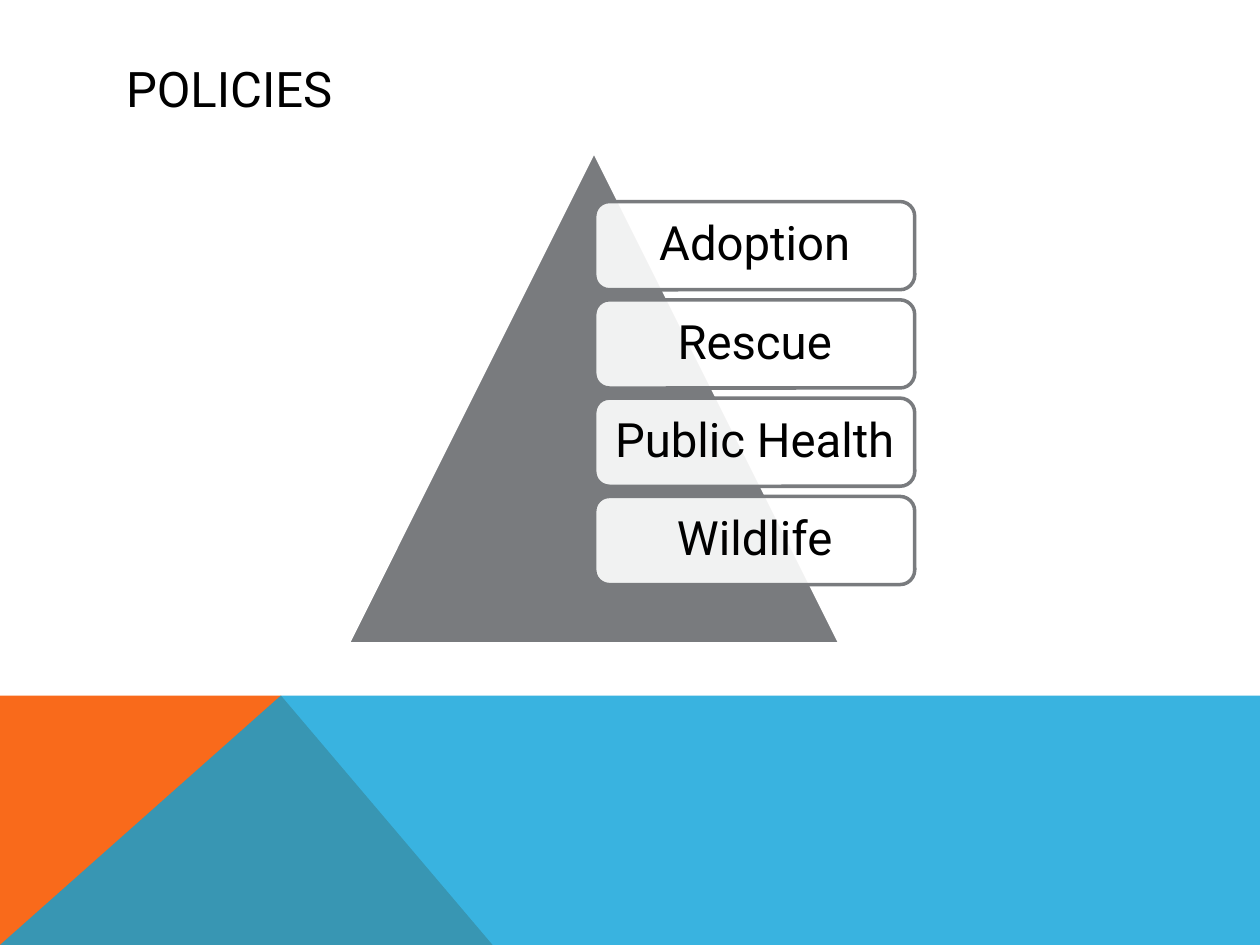
import pptx
import pptx.dml.color
import pptx.enum.shapes
import pptx.enum.text
import pptx.oxml.ns
import pptx.util
from lxml import etree

Inches = pptx.util.Inches
Pt = pptx.util.Pt
Shape = pptx.enum.shapes.MSO_SHAPE
Align = pptx.enum.text.PP_ALIGN
Anchor = pptx.enum.text.MSO_ANCHOR


def color(hex_value):
    return pptx.dml.color.RGBColor.from_string(hex_value)


class PolicySlide:
    font = "Roboto"
    ink = "000000"
    paper = "FFFFFF"
    gray = "797B7E"
    orange = "F96A1B"
    blue = "08A1D9"

    def __init__(self, presentation):
        self.slide = presentation.slides.add_slide(presentation.slide_layouts[5])
        self.slide.background.fill.solid()
        self.slide.background.fill.fore_color.rgb = color(self.paper)

    def paint(self, shape, fill, opacity=100, line=None):
        shape.shadow.inherit = False
        shape.fill.solid()
        shape.fill.fore_color.rgb = color(fill)
        if opacity < 100:
            solid = shape.element.spPr.find(pptx.oxml.ns.qn("a:solidFill"))
            etree.SubElement(solid[0], pptx.oxml.ns.qn("a:alpha"), val=str(opacity * 1000))
        if line:
            shape.line.color.rgb = color(line)
            shape.line.width = Pt(2)
        else:
            shape.line.fill.background()

    def add_text(self, frame, wording, size, align, spacing):
        frame.word_wrap = True
        frame.auto_size = pptx.enum.text.MSO_AUTO_SIZE.NONE
        frame.vertical_anchor = Anchor.MIDDLE
        paragraph = frame.paragraphs[0]
        paragraph.alignment = align
        paragraph.line_spacing = spacing
        run = paragraph.add_run()
        run.text = wording
        run.font.name = self.font
        run.font.size = Pt(size)
        run.font.color.rgb = color(self.ink)

    def title(self, wording, left, top, width, height):
        heading = self.slide.shapes.title
        heading.left, heading.top = Inches(left), Inches(top)
        heading.width, heading.height = Inches(width), Inches(height)
        self.add_text(heading.text_frame, wording, 28, Align.LEFT, 1.0)

    def band(self, corners, fill, opacity=100):
        points = [(Inches(x), Inches(y)) for x, y in corners]
        builder = self.slide.shapes.build_freeform(*points[0])
        builder.add_line_segments(points[1:], close=True)
        self.paint(builder.convert_to_shape(), fill, opacity)

    def diagram(self):
        return self.slide.shapes.add_group_shape()

    def pyramid(self, diagram, left, top, size):
        triangle = diagram.shapes.add_shape(
            Shape.ISOSCELES_TRIANGLE, Inches(left), Inches(top), Inches(size), Inches(size))
        self.paint(triangle, self.gray, line=self.paper)

    def policy(self, diagram, wording, left, top, width, height):
        card = diagram.shapes.add_shape(
            Shape.ROUNDED_RECTANGLE, Inches(left), Inches(top), Inches(width), Inches(height))
        self.paint(card, self.paper, 90, self.gray)
        frame = card.text_frame
        frame.margin_left = frame.margin_right = Inches(0.1)
        frame.margin_top = frame.margin_bottom = Inches(0.1)
        self.add_text(frame, wording, 27, Align.CENTER, 0.9)


def main():
    presentation = pptx.Presentation()
    presentation.slide_width = Inches(10)
    presentation.slide_height = Inches(7.5)

    page = PolicySlide(presentation)
    horizon, peak = 5.52, 2.23
    page.band([(0, 7.5), (0, horizon), (peak, horizon), (3.91, 7.5)], page.orange)
    page.band([(0, 7.5), (peak, horizon), (10, horizon), (10, 7.5)], page.blue, 80)
    page.title("POLICIES", 0.9, 0.4, 8.22, 0.6)

    policies = page.diagram()
    page.pyramid(policies, 2.76, 1.2, 3.91)
    for row, wording in enumerate(["Adoption", "Rescue", "Public Health", "Wildlife"]):
        page.policy(policies, wording, 4.72, 1.6 + row * 0.78, 2.54, 0.7)

    presentation.save("out.pptx")


if __name__ == "__main__":
    main()
